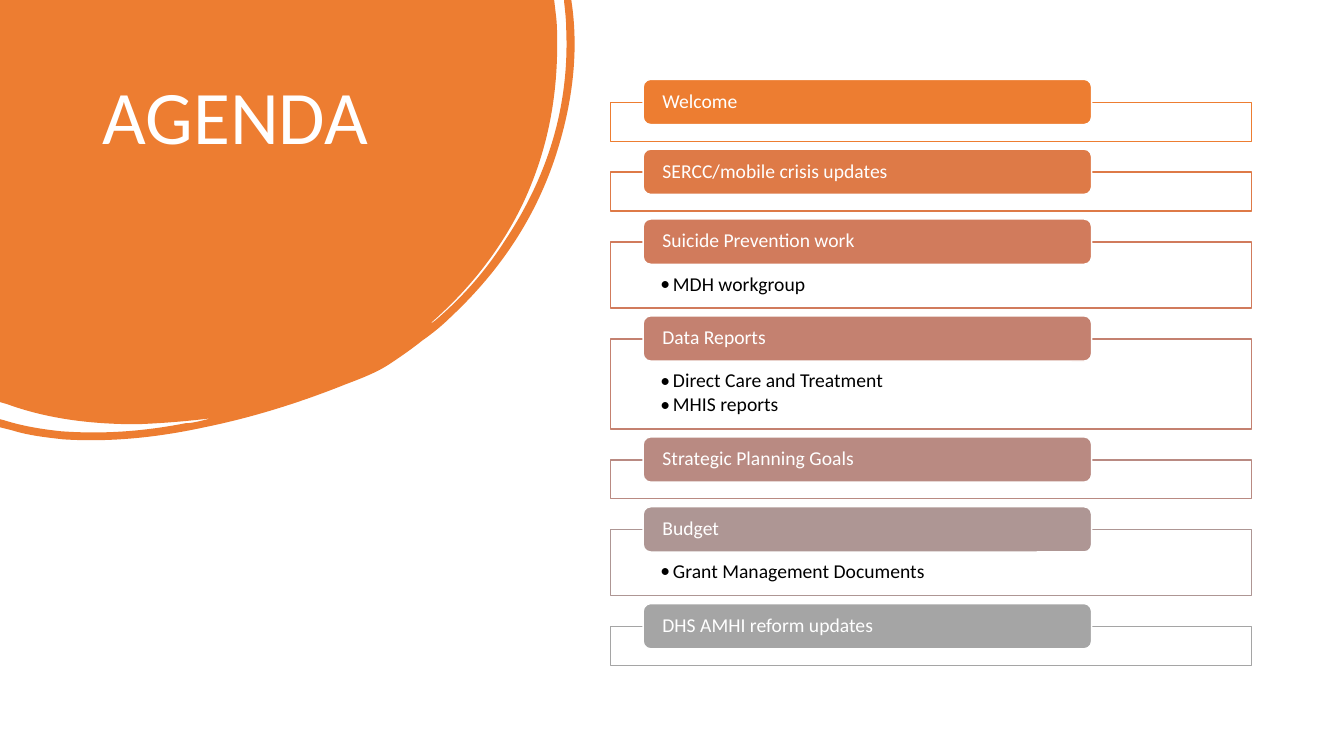
from lxml.etree import SubElement
from pptx import Presentation
from pptx.dml.color import RGBColor
from pptx.enum.shapes import MSO_SHAPE
from pptx.enum.text import MSO_ANCHOR, MSO_AUTO_SIZE, PP_ALIGN
from pptx.oxml.ns import qn
from pptx.util import Cm, Pt

COLOURS = {
    "white": "FFFFFF", "black": "000000", "orange": "ED7D31", "copper": "DE7A47",
    "coral": "D17B5C", "rose": "C48170", "dusk": "B98A82", "mauve": "AE9694",
    "grey": "A5A5A5",
}
AGENDA = [
    ("Welcome", "orange", []),
    ("SERCC/mobile crisis updates", "copper", []),
    ("Suicide Prevention work", "coral", ["MDH workgroup"]),
    ("Data Reports", "rose", ["Direct Care and Treatment", "MHIS reports"]),
    ("Strategic Planning Goals", "dusk", []),
    ("Budget", "mauve", ["Grant Management Documents"]),
    ("DHS AMHI reform updates", "grey", []),
]
FRAME_HEIGHTS = [Cm(0.98), Cm(1.66), Cm(2.27)]
FRAME_GAP = Cm(0.78)
BLOB_GRID = (571, 437)
BLOB_OUTLINE = [
    (550, 0), (552, 17),
    (553, 26, 553, 36, 553, 45), (553, 101, 542, 154, 518, 204),
    (496, 249, 465, 288, 427, 321), (429, 321, 430, 319, 432, 318),
    (459, 295, 482, 269, 501, 239), (543, 176, 565, 107, 562, 30),
    (562, 21, 561, 12, 560, 3), (560, 0), (567, 0), (568, 7),
    (574, 54, 568, 102, 553, 150), (533, 214, 497, 268, 448, 314),
    (439, 323, 429, 331, 419, 338), (409, 346, 399, 353, 387, 361),
    (375, 369, 360, 375, 344, 381), (299, 399, 252, 414, 203, 424),
    (157, 434, 110, 439, 63, 436), (45, 434, 28, 432, 12, 427),
    (0, 424), (0, 416), (4, 417),
    (23, 423, 42, 426, 61, 428), (103, 431, 143, 428, 184, 420),
    (189, 420, 193, 419, 198, 418), (202, 417, 206, 416, 210, 415),
    (186, 418, 161, 420, 136, 421), (92, 421, 48, 416, 7, 401), (0, 399),
]


def colour(name):
    """Return the named colour."""
    return RGBColor.from_string(COLOURS[name])


def paint(shape, fill, line=None):
    """Give a shape a flat fill and an optional outline."""
    shape.shadow.inherit = False
    shape.fill.solid()
    shape.fill.fore_color.rgb = colour(fill)
    if line:
        shape.line.color.rgb = colour(line)
        shape.line.width = Pt(1)
    else:
        shape.line.fill.background()


def write(paragraph, wording, size, ink):
    """Add one left-aligned run to a paragraph."""
    paragraph.alignment = PP_ALIGN.LEFT
    paragraph.line_spacing = 0.9
    run = paragraph.add_run()
    run.text = wording
    run.font.name = "Calibri"
    run.font.size = Pt(size)
    run.font.color.rgb = colour(ink)


def set_insets(frame, left, top, right, bottom):
    """Set the four text margins of a wrapped text frame."""
    frame.word_wrap = True
    frame.margin_left, frame.margin_top = left, top
    frame.margin_right, frame.margin_bottom = right, bottom


def add_blob(slide, left, top, width):
    """Draw the blob, bending each six-number segment into a Bezier curve."""
    columns, rows = BLOB_GRID
    unit = width / columns
    builder = slide.shapes.build_freeform(0, 0, scale=unit)
    builder.add_line_segments([segment[-2:] for segment in BLOB_OUTLINE], close=True)
    blob = builder.convert_to_shape(left, top)
    blob.width, blob.height = width, round(rows * unit)
    outline = next(blob.element.iter(qn("a:path")))
    outline.set("w", str(columns))
    outline.set("h", str(rows))
    for segment, side in zip(BLOB_OUTLINE, outline.findall(qn("a:lnTo"))):
        if len(segment) == 6:
            curve = outline.makeelement(qn("a:cubicBezTo"))
            for x, y in zip(segment[::2], segment[1::2]):
                point = SubElement(curve, qn("a:pt"))
                point.set("x", str(x))
                point.set("y", str(y))
            outline.replace(side, curve)
    paint(blob, "orange")
    return blob


def add_title_region(slide, left, top, width):
    """Draw the orange blob with the title on it."""
    blob = add_blob(slide, left, top, width)
    title = slide.shapes.title
    title.element.addprevious(blob.element)
    title.left, title.top = left + Cm(2.33), top + Cm(1.88)
    title.width, title.height = Cm(8.94), Cm(5.64)
    title.text_frame.auto_size = MSO_AUTO_SIZE.NONE
    title.text_frame.vertical_anchor = MSO_ANCHOR.TOP
    write(title.text_frame.paragraphs[0], "AGENDA", 54, "white")


def add_bullet(paragraph, wording):
    """Write one bulleted line."""
    write(paragraph, wording, 14, "black")
    paragraph.level = 1
    paragraph.space_after = Pt(2)
    properties = paragraph._p.get_or_add_pPr()
    properties.set("marL", str(Cm(0.32)))
    properties.set("indent", str(-Cm(0.32)))
    SubElement(properties, qn("a:buFont")).set("typeface", "Calibri")
    SubElement(properties, qn("a:buChar")).set("char", "•")


def add_topic(group, left, top, width, height, topic, tint, details):
    """Draw one topic: an outlined frame with details and a tag on its top edge."""
    frame = group.shapes.add_shape(MSO_SHAPE.RECTANGLE, left, top, width, height)
    paint(frame, "white", tint)
    white = next(frame.element.spPr.iter(qn("a:srgbClr")))
    SubElement(white, qn("a:alpha")).set("val", "90000")
    text = frame.text_frame
    set_insets(text, Cm(1.25), Cm(0.81), Cm(1.25), Cm(0.28))
    text.vertical_anchor = MSO_ANCHOR.TOP
    for index, detail in enumerate(details):
        add_bullet(text.add_paragraph() if index else text.paragraphs[0], detail)

    tag = group.shapes.add_shape(
        MSO_SHAPE.ROUNDED_RECTANGLE, left + Cm(0.82), top - Cm(0.58), Cm(11.3), Cm(1.14)
    )
    paint(tag, tint, "white")
    set_insets(tag.text_frame, Cm(0.43), 0, Cm(0.43), 0)
    tag.text_frame.vertical_anchor = MSO_ANCHOR.MIDDLE
    write(tag.text_frame.paragraphs[0], topic, 14, "white")


def add_agenda_list(slide, left, top, width):
    """Stack the topics with equal gaps in one group."""
    group = slide.shapes.add_group_shape()
    for topic, tint, details in AGENDA:
        height = FRAME_HEIGHTS[len(details)]
        add_topic(group, left, top, width, height, topic, tint, details)
        top += height + FRAME_GAP


def main():
    """Build and save the agenda slide."""
    deck = Presentation()
    deck.slide_width, deck.slide_height = Cm(33.87), Cm(19.05)
    slide = deck.slides.add_slide(deck.slide_layouts.get_by_name("Title Only"))
    add_title_region(slide, Cm(0), Cm(0), Cm(14.5))
    add_agenda_list(slide, Cm(15.39), Cm(2.58), Cm(16.15))
    deck.save("out.pptx")


if __name__ == "__main__":
    main()
